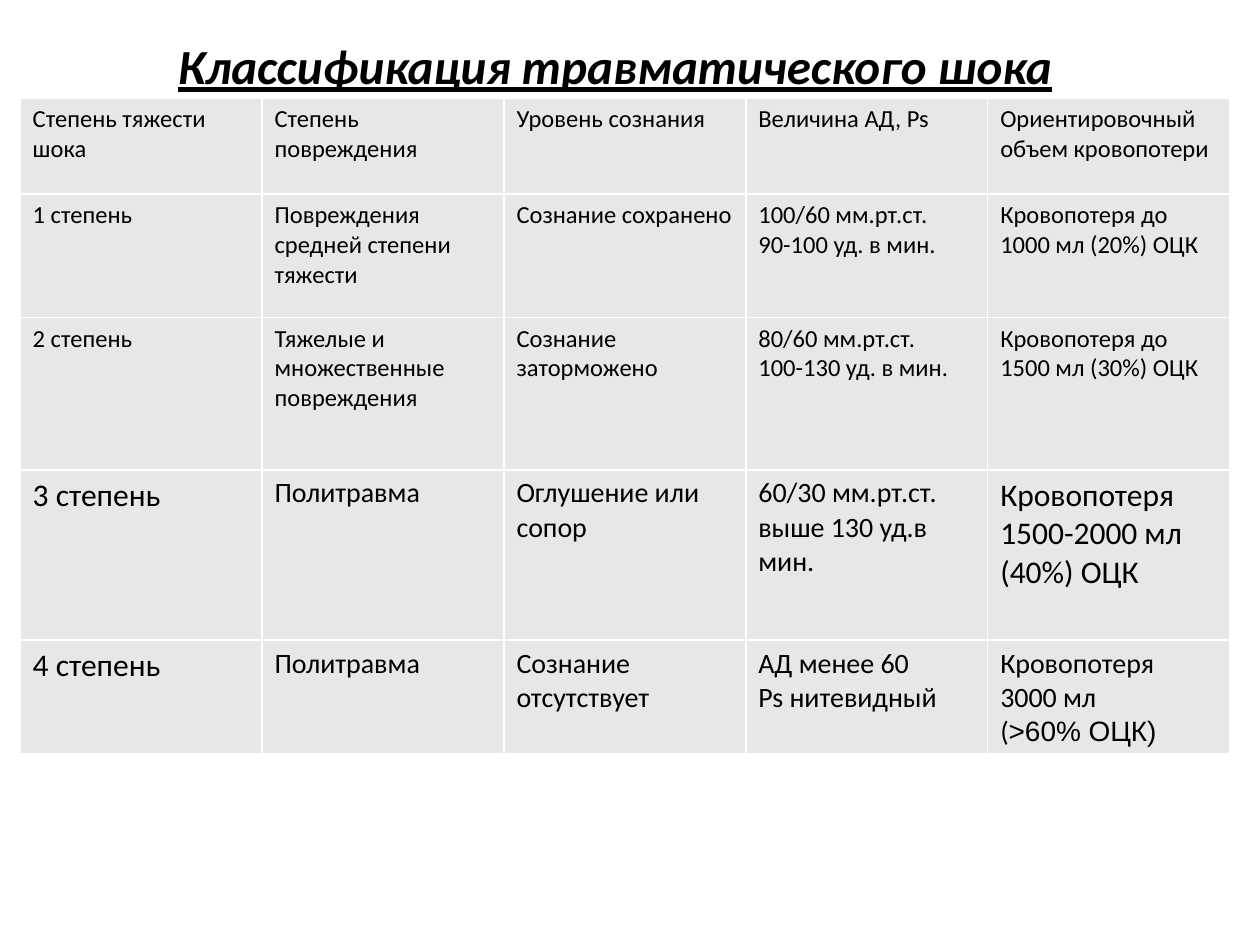
from dataclasses import dataclass

from lxml.etree import SubElement
from pptx import Presentation
from pptx.dml.color import RGBColor
from pptx.enum.text import MSO_ANCHOR, MSO_AUTO_SIZE, PP_ALIGN
from pptx.oxml.ns import qn
from pptx.util import Inches, Pt


@dataclass(frozen=True)
class Theme:
    font: str = "Calibri"
    alt_font: str = "Arial"
    text: str = "000000"
    cell: str = "E7E7E7"
    border: str = "FFFFFF"
    title: int = 28
    small: int = 14
    medium: int = 16
    large: int = 18


THEME = Theme()
TITLE = "Классификация травматического шока"
COL_WIDTH = 1.92
ROW_HEIGHTS = [0.76, 0.98, 1.21, 1.35, 0.9]
SMALL_ROW = [THEME.small] * 5
ROW_SIZES = [
    SMALL_ROW,
    SMALL_ROW,
    SMALL_ROW,
    [THEME.large, THEME.medium, THEME.medium, THEME.medium, THEME.large],
    [THEME.large] + [THEME.medium] * 4,
]
# A line break separates paragraphs; a bar starts a run in the second font.
ROWS = [
    ["Степень тяжести шока", "Степень повреждения", "Уровень сознания",
     "Величина АД, Ps", "Ориентировочный объем кровопотери"],
    ["1 степень", "Повреждения средней степени тяжести", "Сознание сохранено",
     "100/60 мм.рт.ст.\n90-100 уд. в мин.", "Кровопотеря до 1000 мл (20%) ОЦК"],
    ["2 степень", "Тяжелые и множественные повреждения", "Сознание заторможено",
     "80/60 мм.рт.ст.\n100-130 уд. в мин.", "Кровопотеря до 1500 мл (30%) ОЦК"],
    ["3 степень", "Политравма", "Оглушение или сопор",
     "60/30 мм.рт.ст.\nвыше 130 уд.в мин.", "Кровопотеря 1500-2000 мл (40%) ОЦК"],
    ["4 степень", "Политравма", "Сознание отсутствует",
     "АД менее 60\nPs нитевидный", "Кровопотеря 3000 мл\n(|>60% ОЦК)"],
]


def write_text(tf, text, size, align=PP_ALIGN.LEFT, bold=False, italic=False,
               underline=False):
    for i, line in enumerate(text.split("\n")):
        p = tf.add_paragraph() if i else tf.paragraphs[0]
        p.alignment = align
        for part, name in zip(line.split("|"), (THEME.font, THEME.alt_font)):
            r = p.add_run()
            r.text = part
            r.font.name = name
            r.font.size = Pt(size)
            r.font.bold, r.font.italic, r.font.underline = bold, italic, underline
            r.font.color.rgb = RGBColor.from_string(THEME.text)


def style_cell(cell):
    """Fill the cell and draw thin lines on its four sides."""
    tc_pr = cell._tc.get_or_add_tcPr()
    for side in ("a:lnL", "a:lnR", "a:lnT", "a:lnB"):
        ln = SubElement(tc_pr, qn(side), w=str(Pt(1)))
        fill = SubElement(ln, qn("a:solidFill"))
        SubElement(fill, qn("a:srgbClr"), val=THEME.border)
    cell.fill.solid()
    cell.fill.fore_color.rgb = RGBColor.from_string(THEME.cell)


def add_title(slide, left, top, width, height):
    sp = slide.shapes.title
    sp.left, sp.top = Inches(left), Inches(top)
    sp.width, sp.height = Inches(width), Inches(height)
    tf = sp.text_frame
    tf.word_wrap = True
    tf.auto_size = MSO_AUTO_SIZE.SHAPE_TO_FIT_TEXT
    tf.vertical_anchor = MSO_ANCHOR.TOP
    write_text(tf, TITLE, THEME.title, align=PP_ALIGN.CENTER,
               bold=True, italic=True, underline=True)


def add_shock_table(slide, left, top):
    cols = len(ROWS[0])
    table = slide.shapes.add_table(
        len(ROWS), cols, Inches(left), Inches(top),
        Inches(COL_WIDTH * cols), Inches(sum(ROW_HEIGHTS))).table
    table.first_row = table.horz_banding = False
    for col in table.columns:
        col.width = Inches(COL_WIDTH)
    for row, height, texts, sizes in zip(table.rows, ROW_HEIGHTS, ROWS, ROW_SIZES):
        row.height = Inches(height)
        for cell, text, size in zip(row.cells, texts, sizes):
            style_cell(cell)
            write_text(cell.text_frame, text, size)


def main():
    prs = Presentation()
    prs.slide_width, prs.slide_height = Inches(10), Inches(7.5)
    slide = prs.slides.add_slide(prs.slide_layouts.get_by_name("Title Only"))
    add_title(slide, 0.39, 0.23, 8.98, 0.57)
    add_shock_table(slide, 0.16, 0.78)
    prs.save("out.pptx")


if __name__ == "__main__":
    main()
